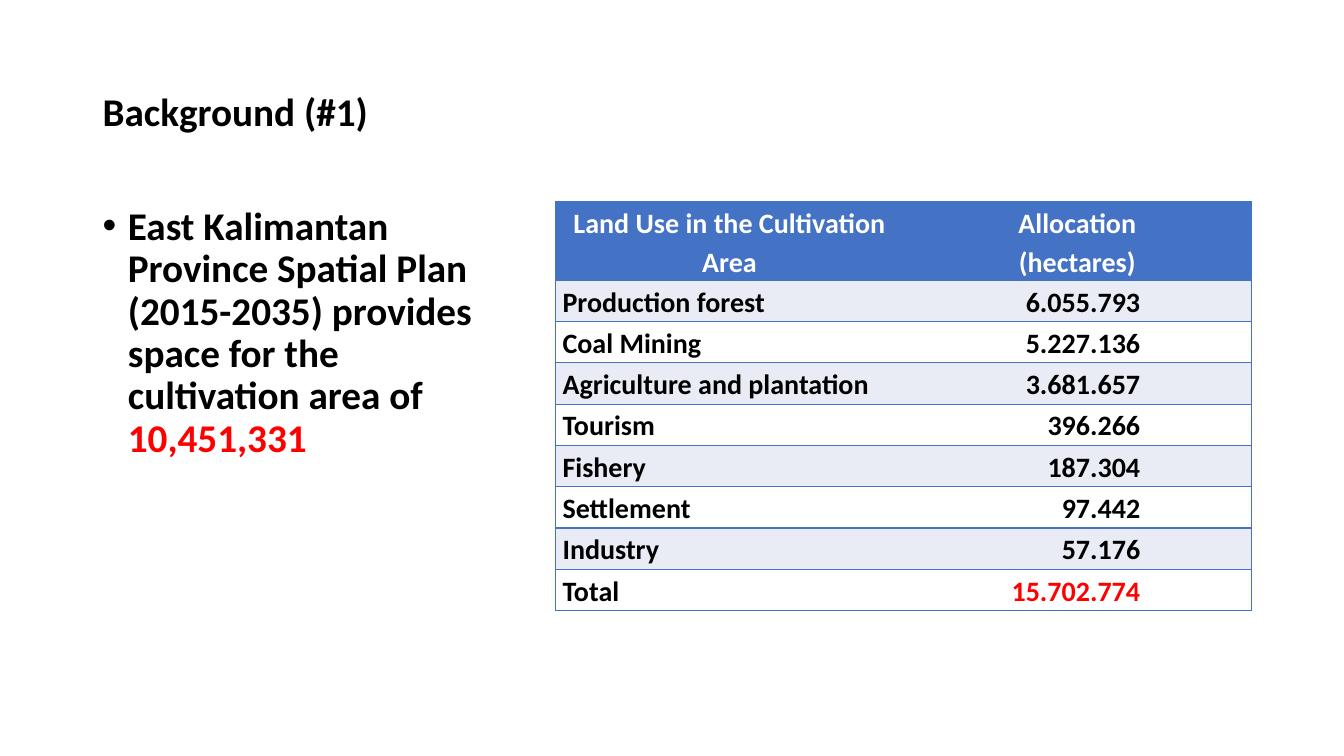
import pptx
import pptx.util
import pptx.dml.color
import pptx.enum.text
import pptx.oxml
import pptx.oxml.ns
from lxml import etree

HEADING = "Background (#1)"
PLAN = [
    ("East Kalimantan Province Spatial Plan (2015-2035) provides space for the cultivation area of ", "black"),
    ("10,451,331", "red"),
]
LAND_USE = [
    ("Land Use in the Cultivation Area", "Allocation\n(hectares)"),
    ("Production forest", "6.055.793"),
    ("Coal Mining", "5.227.136"),
    ("Agriculture and plantation", "3.681.657"),
    ("Tourism", "396.266"),
    ("Fishery", "187.304"),
    ("Settlement", "97.442"),
    ("Industry", "57.176"),
    ("Total", "15.702.774"),
]
COLORS = {"black": "000000", "white": "FFFFFF", "red": "FF0000", "blue": "4472C4", "band": "E9EBF5"}
FONT = "Calibri"
WIDTH, HEIGHT = 13.33, 7.5
LEFT, CONTENT_TOP, TABLE_LEFT = 0.92, 2, 5.51
COLUMN_WIDTH, HEADER_HEIGHT, ROW_HEIGHT = 3.45, 0.78, 0.41
CELL_INSET, NUMBER_INSET = 0.07, 1.1

Inches = pptx.util.Inches
Pt = pptx.util.Pt
ALIGN = pptx.enum.text.PP_ALIGN


def color(name):
    return pptx.dml.color.RGBColor.from_string(COLORS[name])


def style(paragraph, size, ink, spacing, alignment=ALIGN.LEFT):
    paragraph.font.name = FONT
    paragraph.font.size = Pt(size)
    paragraph.font.bold = True
    paragraph.font.color.rgb = color(ink)
    paragraph.line_spacing = spacing
    paragraph.alignment = alignment


def add_text(slide, top, width, height, anchor):
    frame = slide.shapes.add_textbox(Inches(LEFT), Inches(top), Inches(width), Inches(height)).text_frame
    frame.word_wrap = True
    frame.vertical_anchor = anchor
    return frame


def add_bullet(paragraph):
    properties = paragraph._p.get_or_add_pPr()
    properties.set("marL", str(Inches(0.25)))
    properties.set("indent", str(-Inches(0.25)))
    for tag, key, value in (("a:buFont", "typeface", "Arial"), ("a:buChar", "char", "•")):
        etree.SubElement(properties, pptx.oxml.ns.qn(tag)).set(key, value)


def set_borders(cell, column):
    properties = cell._tc.get_or_add_tcPr()
    drawn = {"L": column == 0, "R": column == 1, "T": True, "B": True}
    for side, visible in drawn.items():
        line = etree.SubElement(properties, pptx.oxml.ns.qn(f"a:ln{side}"), w=str(Pt(1)))
        if visible:
            fill = etree.SubElement(line, pptx.oxml.ns.qn("a:solidFill"))
            etree.SubElement(fill, pptx.oxml.ns.qn("a:srgbClr"), val=COLORS["blue"])
        else:
            etree.SubElement(line, pptx.oxml.ns.qn("a:noFill"))


def fill_cell(cell, row, column, text):
    header, number = row == 0, row > 0 and column == 1
    set_borders(cell, column)
    cell.fill.solid()
    cell.fill.fore_color.rgb = color("blue" if header else "band" if row % 2 else "white")
    cell.margin_left = Inches(CELL_INSET)
    cell.margin_right = Inches(NUMBER_INSET if number else CELL_INSET)
    cell.margin_top = cell.margin_bottom = 0
    cell.text = text
    total = number and row == len(LAND_USE) - 1
    ink = "white" if header else "red" if total else "black"
    alignment = ALIGN.CENTER if header else ALIGN.RIGHT if number else ALIGN.LEFT
    for paragraph in cell.text_frame.paragraphs:
        style(paragraph, 20, ink, 1.15, alignment)


def main():
    deck = pptx.Presentation()
    deck.slide_width, deck.slide_height = Inches(WIDTH), Inches(HEIGHT)
    slide = deck.slides.add_slide(deck.slide_layouts[6])

    heading = add_text(slide, 0.4, 11.5, 1.45, pptx.enum.text.MSO_ANCHOR.MIDDLE)
    heading.text = HEADING
    style(heading.paragraphs[0], 28, "black", 0.9)

    plan = add_text(slide, CONTENT_TOP, 4.02, 4.76, pptx.enum.text.MSO_ANCHOR.TOP).paragraphs[0]
    style(plan, 28, "black", 0.9)
    plan.space_before = Pt(10)
    add_bullet(plan)
    for words, ink in PLAN:
        run = plan.add_run()
        run.text = words
        run.font.color.rgb = color(ink)

    table_height = HEADER_HEIGHT + ROW_HEIGHT * (len(LAND_USE) - 1)
    table = slide.shapes.add_table(
        len(LAND_USE), 2, Inches(TABLE_LEFT), Inches(CONTENT_TOP),
        Inches(2 * COLUMN_WIDTH), Inches(table_height),
    ).table
    table.first_row = table.horz_banding = False
    for row, texts in enumerate(LAND_USE):
        table.rows[row].height = Inches(ROW_HEIGHT if row else HEADER_HEIGHT)
        for column, text in enumerate(texts):
            fill_cell(table.cell(row, column), row, column, text)

    deck.save("out.pptx")


if __name__ == "__main__":
    main()
